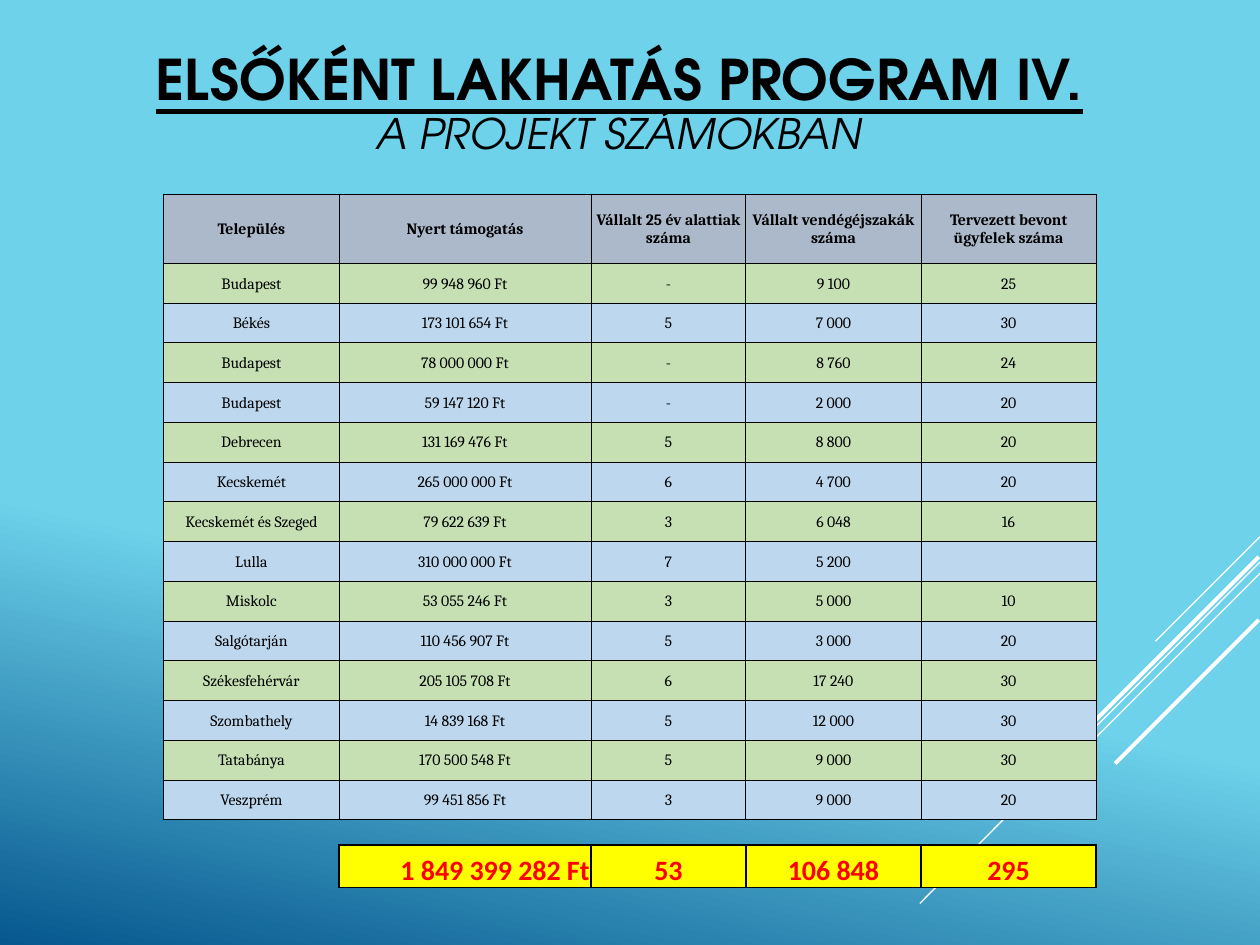
from dataclasses import dataclass
from typing import NamedTuple

from lxml.etree import SubElement
from pptx import Presentation
from pptx.dml.color import RGBColor
from pptx.enum.shapes import MSO_CONNECTOR
from pptx.enum.text import MSO_ANCHOR, PP_ALIGN
from pptx.oxml.ns import qn
from pptx.util import Inches, Pt


@dataclass(frozen=True)
class Theme:
    sky: str = "6ED2EB"
    deep: str = "06588E"
    white: str = "FFFFFF"
    black: str = "000000"
    red: str = "FF0000"
    head: str = "ACB9CA"
    green: str = "C6E0B4"
    blue: str = "BDD7EE"
    yellow: str = "FFFF00"
    title: str = "TeX Gyre Adventor"
    body: str = "Cambria"
    sums: str = "Calibri"
    big: int = 32
    sub: int = 24
    total: int = 16
    small: int = 9
    thin: float = 0.5
    thick: float = 1


class Ray(NamedTuple):
    x1: float
    y1: float
    x2: float
    y2: float
    width: float


class Look(NamedTuple):
    fill: str
    anchor: MSO_ANCHOR
    edge: float
    font: dict


T = Theme()
RAYS = [
    Ray(10, 4.26, 9.17, 5.09, 0.75),
    Ray(10, 4.46, 7.3, 7.17, 0.75),
    Ray(10, 4.55, 8.28, 6.27, 0.75),
    Ray(9.99, 4.42, 8.42, 5.99, 2.25),
    Ray(9.99, 4.92, 8.85, 6.06, 2.25),
]
HEADS = ["Település", "Nyert támogatás", "Vállalt 25 év alattiak száma",
         "Vállalt vendégéjszakák száma", "Tervezett bevont ügyfelek száma"]
TOWNS = [
    ("Budapest", "99 948 960 Ft", "-", "9 100", "25"),
    ("Békés", "173 101 654 Ft", "5", "7 000", "30"),
    ("Budapest", "78 000 000 Ft", "-", "8 760", "24"),
    ("Budapest", "59 147 120 Ft", "-", "2 000", "20"),
    ("Debrecen", "131 169 476 Ft", "5", "8 800", "20"),
    ("Kecskemét", "265 000 000 Ft", "6", "4 700", "20"),
    ("Kecskemét és Szeged", "79 622 639 Ft", "3", "6 048", "16"),
    ("Lulla", "310 000 000 Ft", "7", "5 200", ""),
    ("Miskolc", "53 055 246 Ft", "3", "5 000", "10"),
    ("Salgótarján", "110 456 907 Ft", "5", "3 000", "20"),
    ("Székesfehérvár", "205 105 708 Ft", "6", "17 240", "30"),
    ("Szombathely", "14 839 168 Ft", "5", "12 000", "30"),
    ("Tatabánya", "170 500 548 Ft", "5", "9 000", "30"),
    ("Veszprém", "99 451 856 Ft", "3", "9 000", "20"),
]
SUMS = ["", "1 849 399 282 Ft", "53", "106 848", "295"]
COLS = [1.39, 2, 1.23, 1.39, 1.39]
ROWS = [0.55] + [4.42 / len(TOWNS)] * len(TOWNS) + [0.2, 0.34]
PLAIN = {"name": T.body, "size": Pt(T.small), "bold": False}
HEAD = Look(T.head, MSO_ANCHOR.MIDDLE, T.thin, PLAIN | {"bold": True})
BANDS = [Look(c, MSO_ANCHOR.MIDDLE, T.thin, PLAIN) for c in (T.green, T.blue)]
TOTAL = Look(T.yellow, MSO_ANCHOR.BOTTOM, T.thick,
             {"name": T.sums, "size": Pt(T.total), "bold": True})


def style(item, values: dict) -> None:
    for key, value in values.items():
        setattr(item, key, value)


def write(para, text: str, font: dict, color: str) -> None:
    run = para.add_run()
    run.text = text
    style(run.font, font)
    run.font.color.rgb = RGBColor.from_string(color)


def draw_ray(slide, ray: Ray) -> None:
    line = slide.shapes.add_connector(
        MSO_CONNECTOR.STRAIGHT, *(Inches(v) for v in ray[:4]))
    line.line.width = Pt(ray.width)
    line.line.color.rgb = RGBColor.from_string(T.white)
    SubElement(line._element.spPr, qn("a:effectLst"))


def draw_edge(cell, width: float) -> None:
    props = cell._tc.get_or_add_tcPr()
    for side in "LRTB":
        edge = SubElement(props, qn(f"a:ln{side}"), w=str(Pt(width)))
        fill = SubElement(edge, qn("a:solidFill"))
        SubElement(fill, qn("a:srgbClr"), val=T.black)


def fill_cell(cell, text: str, look: Look, align: PP_ALIGN) -> None:
    draw_edge(cell, look.edge)
    cell.fill.solid()
    cell.fill.fore_color.rgb = RGBColor.from_string(look.fill)
    cell.vertical_anchor = look.anchor
    para = cell.text_frame.paragraphs[0]
    para.alignment = align
    if text:
        write(para, text, look.font, T.red if look is TOTAL else T.black)
    else:
        shrink(cell)


def shrink(cell) -> None:
    """Keep an empty cell from stretching its row."""
    para = cell.text_frame.paragraphs[0]
    SubElement(para._p, qn("a:endParaRPr"), sz=str(T.small * 100))


def draw_table(slide) -> None:
    frame = slide.shapes.add_table(
        len(ROWS), len(COLS), Inches(1.3), Inches(1.54),
        Inches(sum(COLS)), Inches(sum(ROWS)))
    table = frame.table
    style(table, {"first_row": False, "horz_banding": False})
    # The table style without grid or fill
    table._tbl.tblPr[0].text = "{2D5ABB26-0587-4C30-8999-92F81FD0307C}"
    for col, width in zip(table.columns, COLS):
        col.width = Inches(width)
    for row, height in zip(table.rows, ROWS):
        row.height = Inches(height)

    lines = [(HEADS, HEAD)]
    lines += [(town, BANDS[i % 2]) for i, town in enumerate(TOWNS)]
    lines += [([""] * len(COLS), None), (SUMS, TOTAL)]
    pad = Inches(0.01)
    for row, (texts, look) in zip(table.rows, lines):
        for i, (cell, text) in enumerate(zip(row.cells, texts)):
            style(cell, {"margin_left": pad, "margin_right": pad,
                         "margin_top": pad, "margin_bottom": 0})
            if look is None or (look is TOTAL and not text):
                cell.fill.background()
                shrink(cell)
                continue
            right = look is TOTAL and i == 1
            fill_cell(cell, text, look,
                      PP_ALIGN.RIGHT if right else PP_ALIGN.CENTER)


def draw_title(slide) -> None:
    box = slide.shapes.add_textbox(
        Inches(0.83), Inches(0.21), Inches(8.17), Inches(1.25))
    frame = box.text_frame
    style(frame, {"word_wrap": True, "vertical_anchor": MSO_ANCHOR.MIDDLE})
    para = frame.paragraphs[0]
    style(para, {"alignment": PP_ALIGN.CENTER, "line_spacing": 0.9})
    write(para, "ELSŐKÉNT LAKHATÁS PROGRAM IV.",
          {"name": T.title, "size": Pt(T.big), "bold": True,
           "underline": True}, T.black)
    para.add_line_break()
    write(para, "A PROJEKT SZÁMOKBAN",
          {"name": T.title, "size": Pt(T.sub), "italic": True}, T.black)


def paint_back(slide) -> None:
    fill = slide.background.fill
    fill.gradient()
    fill.gradient_angle = 258
    stops = [(0.63, T.sky), (1, T.deep)]
    for stop, (place, color) in zip(fill.gradient_stops, stops):
        stop.position = place
        stop.color.rgb = RGBColor.from_string(color)


def main() -> None:
    deck = Presentation()
    style(deck, {"slide_width": Inches(10), "slide_height": Inches(7.5)})
    slide = deck.slides.add_slide(deck.slide_layouts[6])
    paint_back(slide)
    for ray in RAYS:
        draw_ray(slide, ray)
    draw_table(slide)
    draw_title(slide)
    deck.save("out.pptx")


if __name__ == "__main__":
    main()
